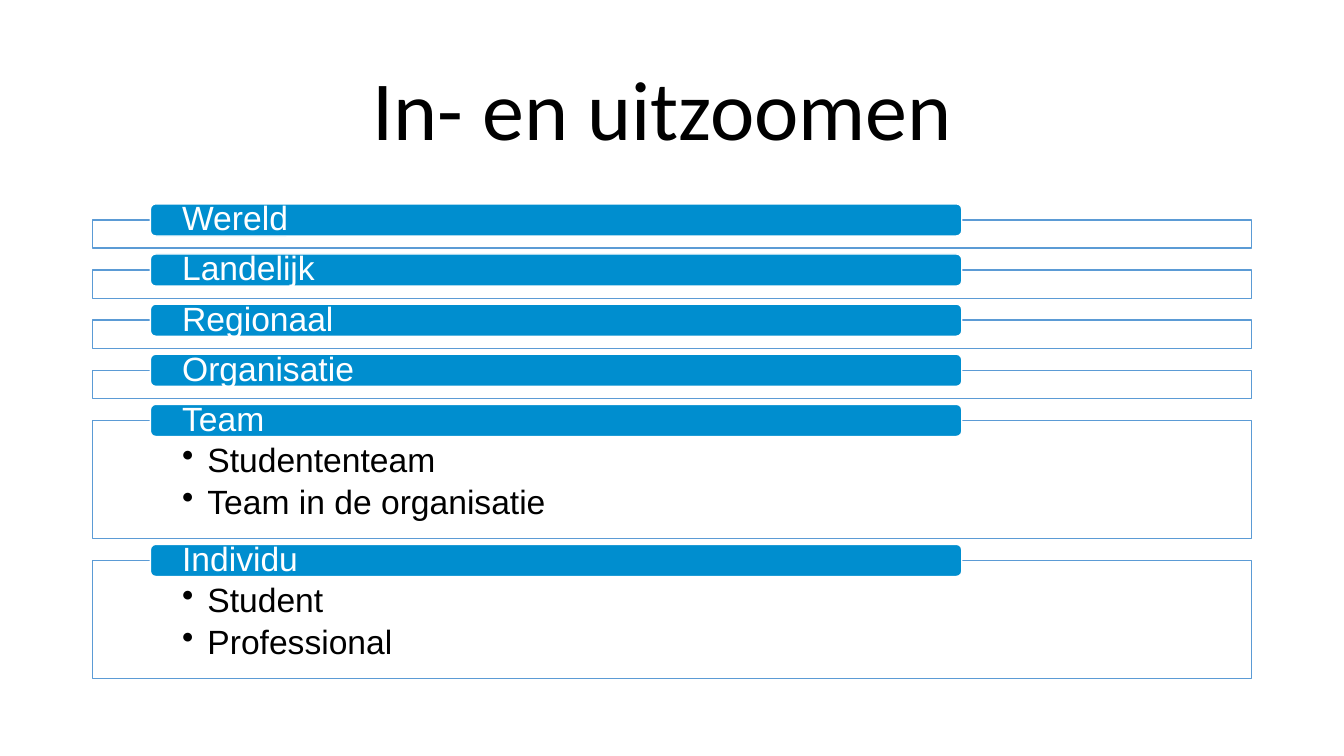
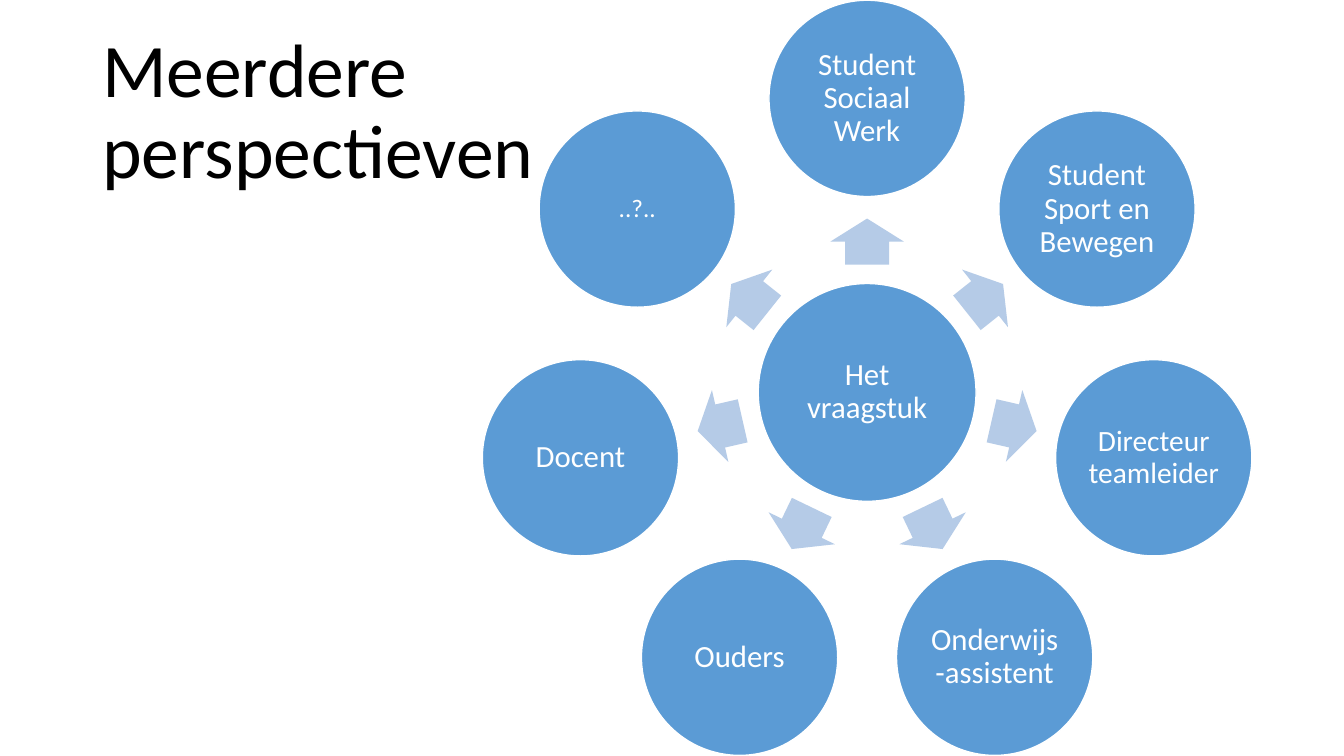
import math
import pptx
import pptx.util
import pptx.dml.color
import pptx.enum.shapes
import pptx.enum.text
import pptx.oxml.ns
import lxml.etree

Pt = pptx.util.Pt
Kind = pptx.enum.shapes.MSO_SHAPE
Align = pptx.enum.text.PP_ALIGN
Anchor = pptx.enum.text.MSO_ANCHOR

BLACK, WHITE = "000000", "FFFFFF"
BLUE, BAR, PALE = "5B9BD5", "008ECF", "B5CBE7"


def tint(code):
    return pptx.dml.color.RGBColor.from_string(code)


class Deck:
    """Holds the shared style and the current slide."""

    def __init__(self):
        self.file = pptx.Presentation()
        self.file.slide_width = Pt(960)
        self.file.slide_height = Pt(540)
        self.slide = None

    def page(self, title, size, align):
        self.slide = self.file.slides.add_slide(self.file.slide_layouts[6])
        box = self.slide.shapes.add_textbox(Pt(66), Pt(28.8), Pt(828), Pt(104.4))
        self.label(box, [title], size, "Calibri", BLACK, align, pads=(7.2, 3.6, 7.2, 3.6))

    def shape(self, kind, left, top, width, height, fill, line=None):
        item = self.slide.shapes.add_shape(kind, Pt(left), Pt(top), Pt(width), Pt(height))
        item.shadow.inherit = False
        item.fill.solid()
        item.fill.fore_color.rgb = tint(fill)
        if line:
            item.line.color.rgb = tint(line)
            item.line.width = Pt(1)
        else:
            item.line.fill.background()
        return item

    def label(self, item, lines, size, font, color, align=Align.LEFT,
              anchor=Anchor.MIDDLE, pads=(2, 2, 2, 2), bullet=False):
        frame = item.text_frame
        frame.word_wrap = True
        frame.vertical_anchor = anchor
        (frame.margin_left, frame.margin_top,
         frame.margin_right, frame.margin_bottom) = map(Pt, pads)
        for index, line in enumerate(lines):
            para = frame.paragraphs[0] if index == 0 else frame.add_paragraph()
            para.text = line
            para.alignment = align
            para.line_spacing = 0.9
            if bullet:
                para.space_after = Pt(4)
                self.dot(para)
            para.font.size = Pt(size)
            para.font.name = font
            para.font.color.rgb = tint(color)

    def dot(self, para):
        props = para._p.get_or_add_pPr()
        props.set("marL", str(Pt(18)))
        props.set("indent", str(-Pt(18)))
        mark = lxml.etree.SubElement(props, pptx.oxml.ns.qn("a:buChar"))
        mark.set("char", "•")

    def level(self, top, height, name, points):
        frame = self.shape(Kind.RECTANGLE, 66, top, 828, height, WHITE, BLUE)
        if points:
            self.label(frame, points, 24, "Arial", BLACK, anchor=Anchor.TOP,
                       pads=(64.2, 16.6, 64.2, 13.7), bullet=True)
        bar = self.shape(Kind.ROUNDED_RECTANGLE, 107.4, top - 11.5, 579.6, 23, BAR, WHITE)
        self.label(bar, [name], 24, "Arial", WHITE, pads=(21.6, 0, 21.6, 0))

    def disc(self, x, y, width, name, size):
        item = self.shape(Kind.OVAL, x - width / 2, y - width / 2, width, width, BLUE, WHITE)
        self.label(item, [name], size, "Calibri", WHITE, Align.CENTER)

    def arrow(self, x, y, turn):
        width, height = 33, 52.6
        item = self.shape(Kind.RIGHT_ARROW, x - width / 2, y - height / 2, width, height, PALE)
        item.adjustments[0] = 0.6
        item.adjustments[1] = 0.5
        item.rotation = turn % 360


def zoom(deck):
    deck.page("In- en uitzoomen ", 60, Align.CENTER)
    levels = [
        ("Wereld", []),
        ("Landelijk", []),
        ("Regionaal", []),
        ("Organisatie", []),
        ("Team", ["Studententeam", "Team in de organisatie"]),
        ("Individu", ["Student", "Professional"]),
    ]
    top, gap = 157.1, 15.6
    for name, points in levels:
        height = 84.4 if points else 20.2
        deck.level(top, height, name, points)
        top += height + gap


def views(deck):
    deck.page("Meerdere \vperspectieven", 54, Align.LEFT)
    x, y = 619.4, 280.3
    deck.disc(x, y, 155.6, "Het vraagstuk", 22)
    roles = [
        ("Student Sociaal Werk", 22),
        ("Student Sport en Bewegen", 22),
        ("Directeur teamleider", 21),
        ("Onderwijs-assistent", 22),
        ("Ouders", 22),
        ("Docent", 22),
        ("..?..", 18),
    ]
    for index, (name, size) in enumerate(roles):
        turn = 360 * index / len(roles) - 90
        across, down = math.cos(math.radians(turn)), math.sin(math.radians(turn))
        deck.arrow(x + 107.7 * across, y + 107.7 * down, turn)
        deck.disc(x + 210 * across, y + 210 * down, 140.2, name, size)


def main():
    deck = Deck()
    zoom(deck)
    views(deck)
    deck.file.save("out.pptx")


if __name__ == "__main__":
    main()
